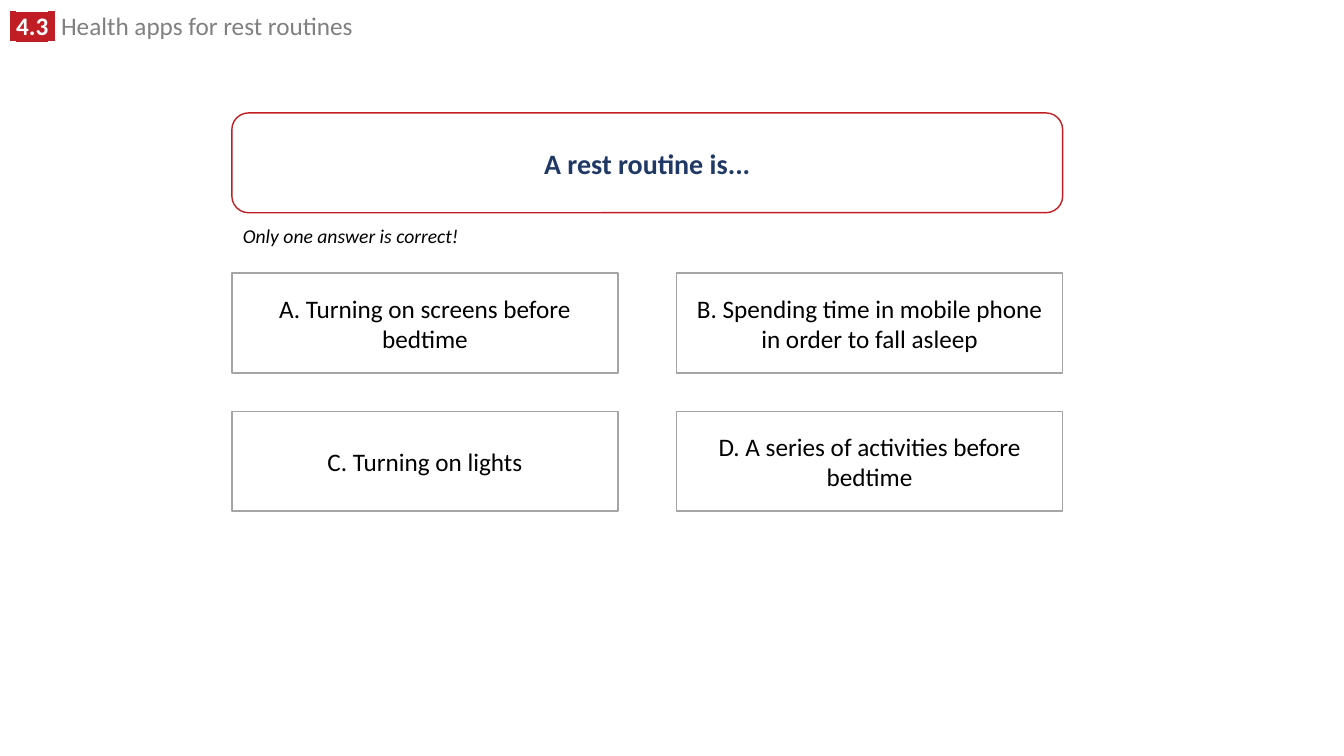
"""Quiz slide: one question on rest routines with four possible answers."""
from lxml import etree
from pptx import Presentation
from pptx.dml.color import RGBColor
from pptx.enum.shapes import MSO_SHAPE as Preset
from pptx.enum.text import MSO_ANCHOR as Anchor, MSO_AUTO_SIZE as AutoSize, PP_ALIGN as Align
from pptx.oxml.ns import qn
from pptx.util import Inches, Pt

RED = RGBColor(0xC0, 0x1E, 0x24)
NAVY = RGBColor(0x20, 0x38, 0x64)
GREY = RGBColor(0x80, 0x80, 0x80)
BORDER = RGBColor(0xA5, 0xA5, 0xA5)
BLACK = RGBColor(0, 0, 0)
WHITE = RGBColor(0xFF, 0xFF, 0xFF)

LEFT, BOX_HEIGHT = 2.3, 0.99
QUESTION_TOP, QUESTION_WIDTH = 1.12, 8.24
ANSWER_TOP, ANSWER_WIDTH = 2.71, 3.83
COLUMN_STEP, ROW_STEP = QUESTION_WIDTH - ANSWER_WIDTH, 1.37
ANSWERS = [
    "A. Turning on screens before bedtime",
    "B. Spending time in mobile phone in order to fall asleep",
    "C. Turning on lights",
    "D. A series of activities before bedtime",
]


def style(run, size, color, bold=False, italic=False, face="Calibri"):
    font = run.font
    font.name, font.size, font.bold, font.italic = face, Pt(size), bold, italic
    font.color.rgb = color


def add_box(preset, left, top, width, border, text, size, color, bold=False):
    box = slide.shapes.add_shape(
        preset, Inches(left), Inches(top), Inches(width), Inches(BOX_HEIGHT))
    box.shadow.inherit = False
    box.fill.solid()
    box.fill.fore_color.rgb = WHITE
    box.line.color.rgb = border
    box.line.width = Pt(1)
    frame = box.text_frame
    frame.text = text
    frame.word_wrap = True
    frame.vertical_anchor = Anchor.MIDDLE
    frame.paragraphs[0].alignment = Align.CENTER
    style(frame.paragraphs[0].runs[0], size, color, bold)


deck = Presentation()
deck.slide_width, deck.slide_height = Inches(13.33), Inches(7.5)
slide = deck.slides.add_slide(deck.slide_layouts[5])

heading = slide.shapes.title
heading.left, heading.top = Inches(0), Inches(0.11)
heading.width, heading.height = Inches(9.52), Inches(0.35)
heading.text_frame.vertical_anchor = Anchor.TOP
heading.text_frame.auto_size = AutoSize.SHAPE_TO_FIT_TEXT
heading_line = heading.text_frame.paragraphs[0]
heading_line.alignment = Align.LEFT
heading_line.line_spacing = 0.8
for text, face, tagged in [
    (" ", "Lato", True),
    ("4.3", "Calibri", True),
    (" ", "Lato", True),
    (" ", "Lato", False),
    ("Health apps for rest routines", "Calibri", False),
]:
    part = heading_line.add_run()
    part.text = text
    style(part, 18, WHITE if tagged else GREY, bold=tagged, face=face)
    if tagged:
        highlight = etree.Element(qn("a:highlight"))
        etree.SubElement(highlight, qn("a:srgbClr"), val=str(RED))
        part.font._element.find(qn("a:solidFill")).addnext(highlight)

add_box(Preset.ROUNDED_RECTANGLE, LEFT, QUESTION_TOP, QUESTION_WIDTH, RED,
        "A rest routine is...", 20, NAVY, bold=True)

for index, answer in enumerate(ANSWERS):
    row, column = divmod(index, 2)
    add_box(Preset.RECTANGLE, LEFT + column * COLUMN_STEP, ANSWER_TOP + row * ROW_STEP,
            ANSWER_WIDTH, BORDER, answer, 18, BLACK)

hint = slide.shapes.add_textbox(Inches(2.31), Inches(2.17), Inches(2.36), Inches(0.34))
hint.text_frame.text = "Only one answer is correct!"
hint.text_frame.word_wrap = False
hint.text_frame.auto_size = AutoSize.SHAPE_TO_FIT_TEXT
style(hint.text_frame.paragraphs[0].runs[0], 14, BLACK, italic=True)

deck.save("out.pptx")
